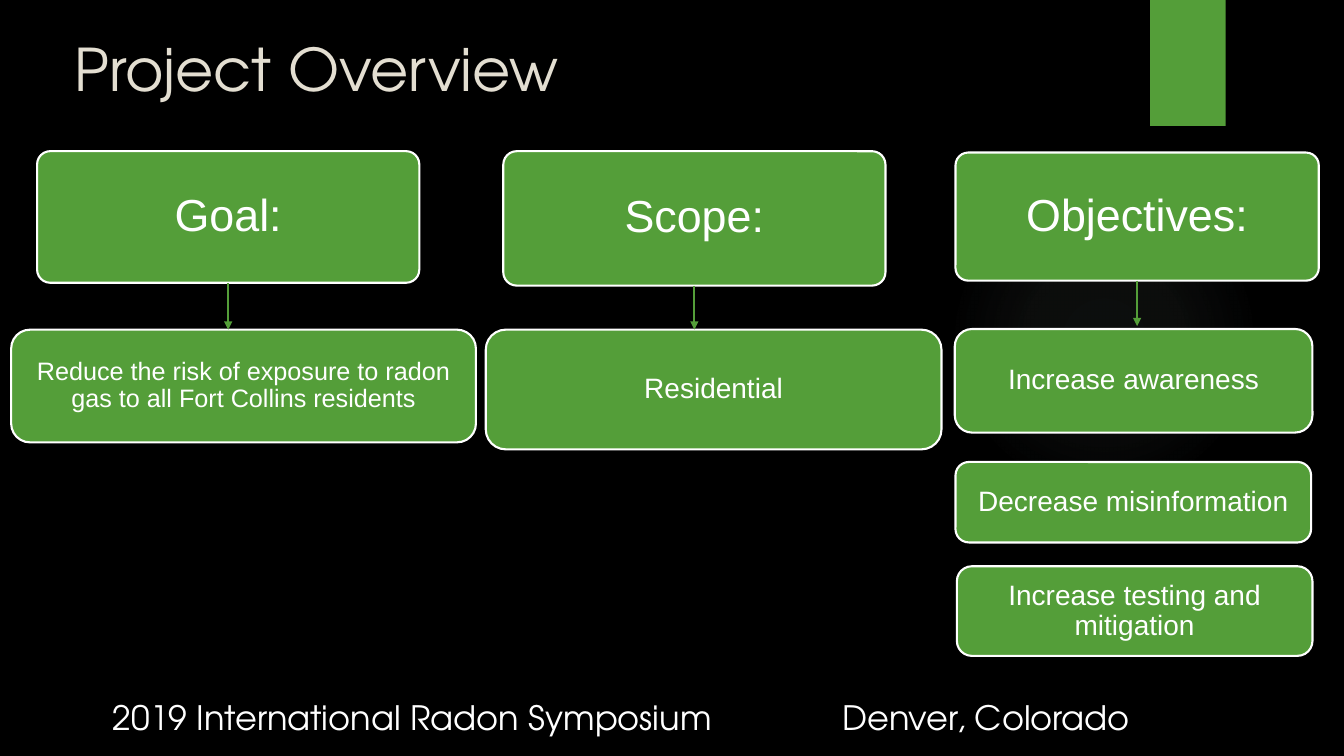
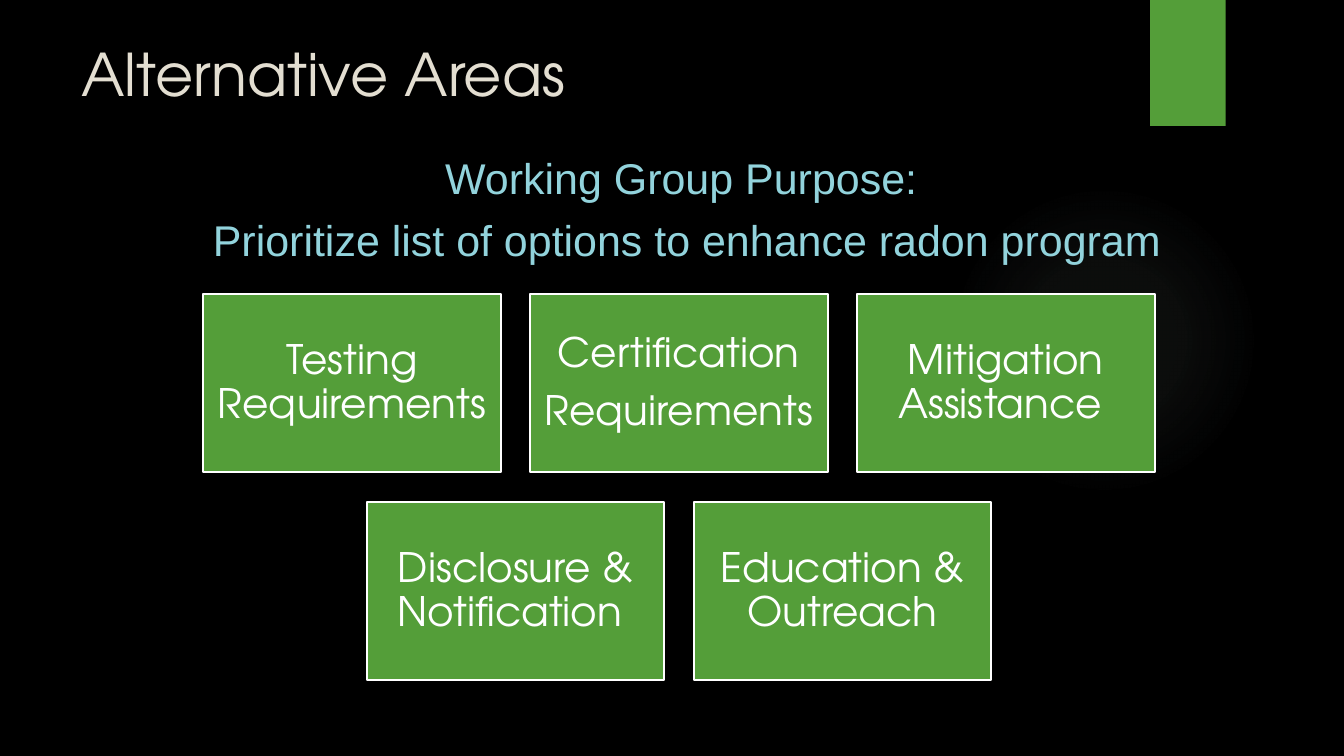
import lxml.etree
import pptx
import pptx.dml.color
import pptx.enum.shapes
import pptx.enum.text
import pptx.oxml
import pptx.oxml.ns
import pptx.util

Pt = pptx.util.Pt
SHAPE = pptx.enum.shapes.MSO_SHAPE
ALIGN = pptx.enum.text.PP_ALIGN
ANCHOR = pptx.enum.text.MSO_ANCHOR
qn = pptx.oxml.ns.qn

COLORS = {
    "background": "000000",
    "green": "549E39",
    "glow": "AFC5B9",
    "title": "E3DED1",
    "purpose": "92D3DC",
    "white": "FFFFFF",
}
RGB = {name: pptx.dml.color.RGBColor.from_string(value) for name, value in COLORS.items()}
DISPLAY = "TeX Gyre Adventor"
SANS = "Arial"


def write(frame, lines, font, size, color, align=ALIGN.CENTER, spacing=1.0, gap=0):
    """Fill a text frame with one paragraph per line, gap points apart."""
    frame.word_wrap = True
    for index, line in enumerate(lines):
        para = frame.paragraphs[0] if index == 0 else frame.add_paragraph()
        para.text = line
        para.alignment = align
        para.line_spacing = spacing
        para.space_before = Pt(gap if index else 0)
        para.font.name = font
        para.font.size = Pt(size)
        para.font.color.rgb = RGB[color]


def add_card(page, kind, bounds, lines, font, size, corner=None):
    """Add a green card with a white outline and centred text."""
    card = page.shapes.add_shape(kind, *map(Pt, bounds))
    card.shadow.inherit = False
    if corner is not None:
        card.adjustments[0] = corner
    card.fill.solid()
    card.fill.fore_color.rgb = RGB["green"]
    card.line.color.rgb = RGB["white"]
    card.line.width = Pt(1.5)
    frame = card.text_frame
    frame.margin_left = frame.margin_right = Pt(8)
    frame.margin_top = frame.margin_bottom = Pt(8)
    frame.vertical_anchor = ANCHOR.MIDDLE
    write(frame, lines, font, size, "white", spacing=0.9, gap=10)
    return card


deck = pptx.Presentation()
deck.slide_width, deck.slide_height = Pt(960), Pt(540)
master = deck.slide_master
master.background.fill.solid()
master.background.fill.fore_color.rgb = RGB["background"]

# Pages and titles
pages = []
for title_text, bounds in [
    ("Project Overview", (46, 19.5, 741, 110)),
    ("Alternative Areas", (51, 23, 741, 62)),
]:
    page = deck.slides.add_slide(deck.slide_layouts.get_by_name("Title Only"))
    title = page.shapes.title
    title.left, title.top, title.width, title.height = map(Pt, bounds)
    title.text_frame.vertical_anchor = ANCHOR.TOP
    write(title.text_frame, [title_text], DISPLAY, 42, "title", ALIGN.LEFT)
    pages.append(page)
overview, areas = pages

# Glow and band, moved to the master so that every page shows them
glow = overview.shapes.add_shape(SHAPE.OVAL, Pt(677.5), Pt(132), Pt(222), Pt(222))
band = overview.shapes.add_shape(SHAPE.RECTANGLE, Pt(821.5), Pt(0), Pt(54), Pt(90))
for position, shape in enumerate([glow, band]):
    shape.shadow.inherit = False
    shape.fill.solid()
    shape.fill.fore_color.rgb = RGB["green"]
    shape.line.fill.background()
    shape.element.nvSpPr.cNvPr.set("id", str(101 + position))
    master.shapes.element.insert(2 + position, shape.element)

stops = "".join(
    f'<a:gs pos="{place * 1000}"><a:srgbClr val="{COLORS["glow"]}">'
    f'<a:alpha val="{opacity * 1000}"/></a:srgbClr></a:gs>'
    for place, opacity in [(0, 7), (36, 6), (69, 0)]
)
gradient = pptx.oxml.parse_xml(
    f'<a:gradFill {pptx.oxml.ns.nsdecls("a")}><a:gsLst>{stops}</a:gsLst>'
    '<a:path path="circle"><a:fillToRect l="50000" t="50000" r="50000" b="50000"/></a:path>'
    "</a:gradFill>"
)
properties = glow.element.spPr
properties.replace(properties.find(qn("a:solidFill")), gradient)

# Project overview: a heading, an arrow and cards in each column
columns = [
    ("Goal:", (26.5, 108, 273, 94), 235.5, 18, [
        ("Reduce the risk of exposure to radon gas to all Fort Collins residents",
         (8, 235.5, 332, 80.5)),
    ]),
    ("Scope:", (359.5, 108, 273, 96), 235.5, 20, [
        ("Residential", (347, 235.5, 325.5, 85.5)),
    ]),
    ("Objectives:", (682.5, 109, 259.5, 91.5), 233, 20, [
        ("Increase awareness", (682, 235, 255.5, 74)),
        ("Decrease misinformation", (682.5, 330, 254, 57.5)),
        ("Increase testing and mitigation", (683.5, 404.5, 254, 64)),
    ]),
]
for heading_text, bounds, arrow_end, size, cards in columns:
    heading = add_card(overview, SHAPE.ROUNDED_RECTANGLE, bounds, [heading_text], SANS, 32, 0.1)
    for text, card_bounds in cards:
        add_card(overview, SHAPE.ROUNDED_RECTANGLE, card_bounds, [text], SANS, size, 0.167)
    middle = heading.left + heading.width // 2
    arrow = overview.shapes.add_connector(
        pptx.enum.shapes.MSO_CONNECTOR.STRAIGHT,
        middle, heading.top + heading.height, middle, Pt(arrow_end))
    arrow.begin_connect(heading, 2)
    arrow.line.color.rgb = RGB["green"]
    arrow.line.width = Pt(1.5)
    lxml.etree.SubElement(arrow.line._get_or_add_ln(), qn("a:tailEnd"), type="triangle")
    lxml.etree.SubElement(arrow.element.spPr, qn("a:effectLst"))

venue = overview.shapes.add_textbox(Pt(73.5), Pt(494.5), Pt(765), Pt(36))
tab_list = lxml.etree.SubElement(
    venue.text_frame.paragraphs[0]._p.get_or_add_pPr(), qn("a:tabLst"))
lxml.etree.SubElement(tab_list, qn("a:tab"), pos=str(Pt(521)), algn="l")
write(venue.text_frame, ["2019 International Radon Symposium\tDenver, Colorado"],
      DISPLAY, 24, "white", ALIGN.LEFT)

# Alternative areas: two centred rows of cards
card_width, card_height, card_gap = 212.5, 127.5, 21
rows = [
    [["Testing Requirements"], ["Certification", "Requirements"], ["Mitigation Assistance "]],
    [["Disclosure & Notification "], ["Education & Outreach"]],
]
for row_index, row in enumerate(rows):
    row_width = len(row) * (card_width + card_gap) - card_gap
    top = 210 + row_index * (card_height + card_gap)
    for column_index, lines in enumerate(row):
        left = 485 - row_width / 2 + column_index * (card_width + card_gap)
        add_card(areas, SHAPE.RECTANGLE, (left, top, card_width, card_height),
                 lines, DISPLAY, 29)

purpose = areas.shapes.add_textbox(Pt(62.5), Pt(105), Pt(857), Pt(86))
write(purpose.text_frame,
      ["Working Group Purpose: ", "Prioritize list of options to enhance radon program"],
      SANS, 30.7, "purpose", gap=7)

deck.save("out.pptx")
